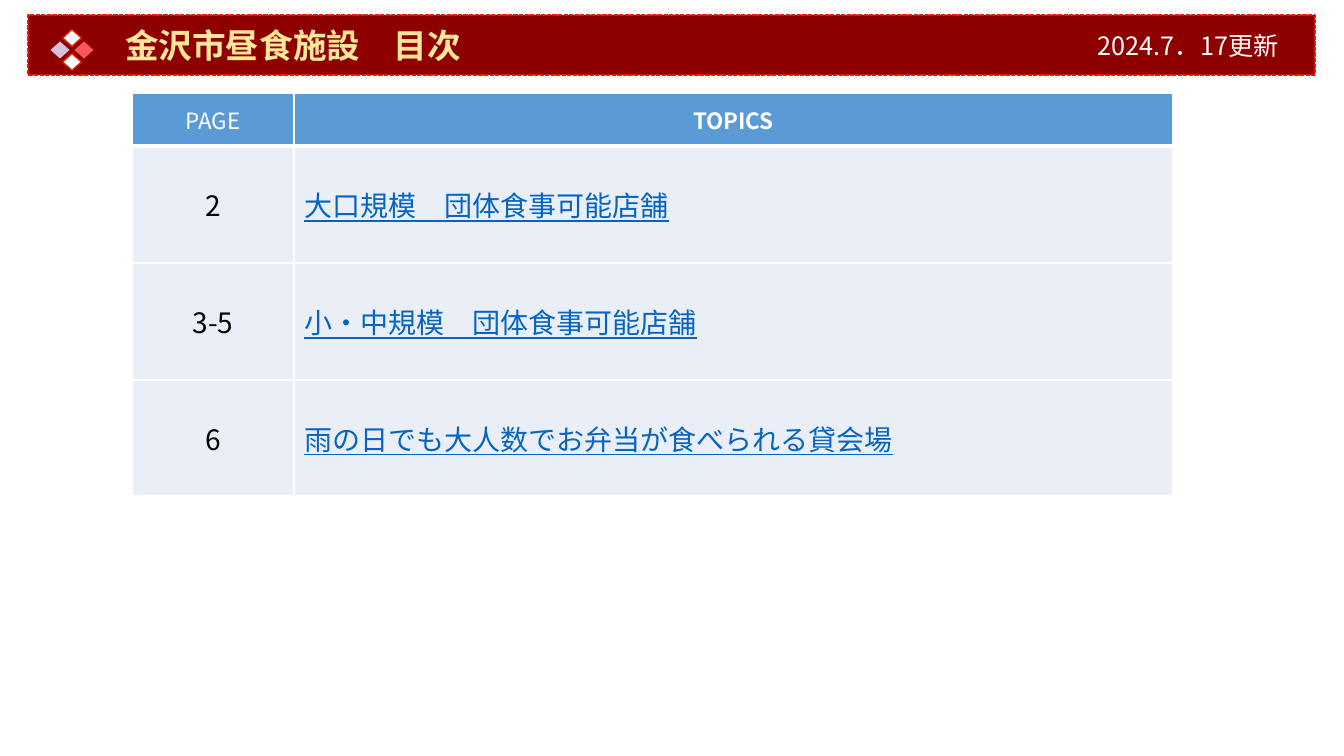
from dataclasses import dataclass

from lxml import etree
from pptx import Presentation
from pptx import util as u
from pptx.dml.color import RGBColor
from pptx.enum import dml, shapes, text
from pptx.oxml.ns import qn

EMU_PER_PX = 914400 / 100.8


@dataclass(frozen=True)
class Theme:
    font: str = "Noto Sans CJK JP"
    white: str = "FFFFFF"
    black: str = "000000"
    banner: str = "8E0000"
    outline: str = "E21B00"
    title: str = "FFE699"
    red: str = "FF5657"
    lilac: str = "DAC1DB"
    header: str = "5B9BD5"
    row: str = "EAEFF7"
    link: str = "0563C1"
    title_pt: int = 24
    topic_pt: int = 20
    date_pt: int = 18
    header_pt: int = 16


@dataclass(frozen=True)
class Petal:
    dx: int
    dy: int
    color: str
    outlined: bool


@dataclass(frozen=True)
class Topic:
    page: str
    name: str


THEME = Theme()
PETALS = [
    Petal(0, -1, THEME.white, True),
    Petal(1, 0, THEME.red, False),
    Petal(-1, 0, THEME.lilac, False),
    Petal(0, 1, THEME.white, True),
]
TOPICS = [
    Topic("2", "大口規模　団体食事可能店舗"),
    Topic("3-5", "小・中規模　団体食事可能店舗"),
    Topic("6", "雨の日でも大人数でお弁当が食べられる貸会場"),
]


def px(length: int) -> u.Emu:
    return u.Emu(round(length * EMU_PER_PX))


def box(left: int, top: int, width: int, height: int) -> tuple:
    return px(left), px(top), px(width), px(height)


def write(frame, words: str, *, size: int, color: str, bold: bool = False,
          underline: bool = False, align=text.PP_ALIGN.LEFT) -> None:
    paragraph = frame.paragraphs[0]
    paragraph.alignment = align
    run = paragraph.add_run()
    run.text = words
    font = run.font
    font.name, font.size = THEME.font, u.Pt(size)
    font.bold, font.underline = bold, underline
    font.color.rgb = RGBColor.from_string(color)
    east_asian = etree.Element(qn("a:ea"), typeface=THEME.font)
    run._r.rPr.find(qn("a:latin")).addnext(east_asian)


def paint(shape, fill: str, outlined: bool) -> None:
    shape.fill.solid()
    shape.fill.fore_color.rgb = RGBColor.from_string(fill)
    if outlined:
        shape.line.color.rgb = RGBColor.from_string(THEME.outline)
        shape.line.width = u.Pt(1)
    else:
        shape.line.fill.background()


def draw_banner(slide) -> None:
    banner = slide.shapes.title
    banner.left, banner.top, banner.width, banner.height = box(28, 15, 1287, 60)
    paint(banner, THEME.banner, True)
    banner.line.dash_style = dml.MSO_LINE.SQUARE_DOT
    frame = banner.text_frame
    frame.auto_size = text.MSO_AUTO_SIZE.NONE
    frame.vertical_anchor = text.MSO_ANCHOR.MIDDLE
    frame.margin_left = px(97)
    frame.paragraphs[0].line_spacing = 1.0
    write(frame, "金沢市昼食施設　目次", size=THEME.title_pt, color=THEME.title, bold=True)


def draw_petal(slide, petal: Petal) -> None:
    center_x, center_y, step, width, height = 72, 50, 12, 19, 17
    diamond = slide.shapes.add_shape(
        shapes.MSO_SHAPE.DIAMOND,
        px(center_x + petal.dx * step) - px(width) // 2,
        px(center_y + petal.dy * step) - px(height) // 2,
        px(width), px(height))
    diamond.shadow.inherit = False
    paint(diamond, petal.color, petal.outlined)


def style_cell(cell, fill: str, bottom_pt: int) -> None:
    properties = cell._tc.get_or_add_tcPr()
    for side in "LRTB":
        points = bottom_pt if side == "B" else 1
        border = etree.SubElement(properties, qn(f"a:ln{side}"), w=str(u.Pt(points)))
        solid = etree.SubElement(border, qn("a:solidFill"))
        etree.SubElement(solid, qn("a:srgbClr"), val=THEME.white)
    cell.fill.solid()
    cell.fill.fore_color.rgb = RGBColor.from_string(fill)
    cell.vertical_anchor = text.MSO_ANCHOR.MIDDLE


def draw_contents(slide, topics: list[Topic]) -> None:
    column_widths, row_heights = (162, 879), (53, 117, 117, 116)
    contents = slide.shapes.add_table(
        len(topics) + 1, 2,
        *box(132, 93, sum(column_widths), sum(row_heights))).table
    contents.horz_banding = False
    for column, width in zip(contents.columns, column_widths):
        column.width = px(width)
    for row, height in zip(contents.rows, row_heights):
        row.height = px(height)

    # Header row
    for column, heading in enumerate(("PAGE", "TOPICS")):
        cell = contents.cell(0, column)
        style_cell(cell, THEME.header, bottom_pt=3)
        write(cell.text_frame, heading, size=THEME.header_pt, color=THEME.white,
              bold=column == 1, align=text.PP_ALIGN.CENTER)

    # Topic rows
    for row, topic in enumerate(topics, start=1):
        page, name = contents.cell(row, 0), contents.cell(row, 1)
        for cell in (page, name):
            style_cell(cell, THEME.row, bottom_pt=1)
        write(page.text_frame, topic.page, size=THEME.topic_pt, color=THEME.black,
              align=text.PP_ALIGN.CENTER)
        write(name.text_frame, topic.name, size=THEME.topic_pt, color=THEME.link,
              underline=True)


def draw_update_date(slide) -> None:
    frame = slide.shapes.add_textbox(*box(1088, 25, 228, 40)).text_frame
    frame.word_wrap = True
    write(frame, "2024.7．17更新", size=THEME.date_pt, color=THEME.white)


def main() -> None:
    deck = Presentation()
    deck.slide_width, deck.slide_height = px(1344), px(756)
    slide = deck.slides.add_slide(deck.slide_layouts[5])
    draw_banner(slide)
    for petal in PETALS:
        draw_petal(slide, petal)
    draw_contents(slide, TOPICS)
    draw_update_date(slide)
    deck.save("out.pptx")


if __name__ == "__main__":
    main()
